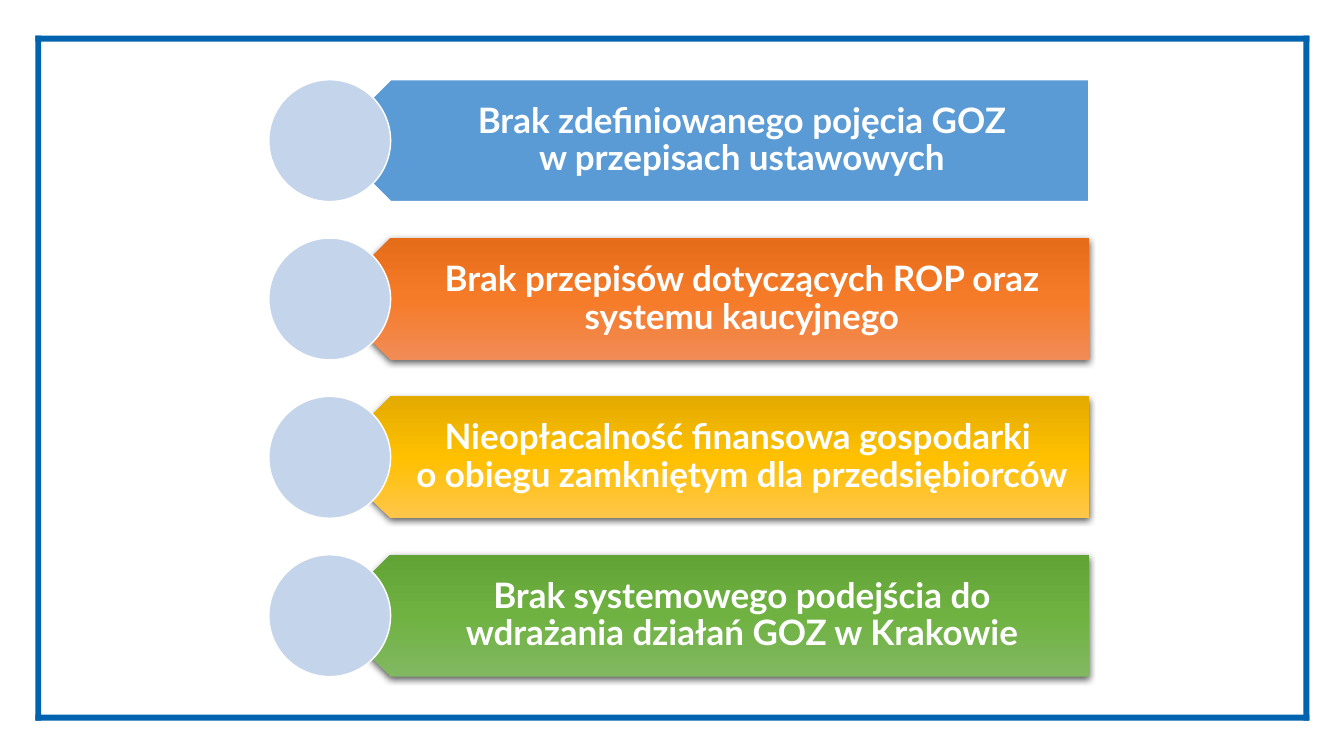
from copy import deepcopy

from lxml import etree
from pptx import Presentation
from pptx.dml.color import RGBColor
from pptx.enum.shapes import MSO_SHAPE
from pptx.enum.text import MSO_ANCHOR, PP_ALIGN
from pptx.oxml.ns import qn
from pptx.util import Cm, Pt

RECTANGLE, PENTAGON, OVAL = MSO_SHAPE.RECTANGLE, MSO_SHAPE.PENTAGON, MSO_SHAPE.OVAL
MIDDLE, CENTER = MSO_ANCHOR.MIDDLE, PP_ALIGN.CENTER

BARRIERS = [
    ("Brak zdefiniowanego pojęcia GOZ\vw przepisach ustawowych", ["5B9BD5"]),
    ("Brak przepisów dotyczących ROP oraz systemu kaucyjnego",
     ["F18C57", "F67B28", "E56C19"]),
    ("Nieopłacalność finansowa gospodarki \vo obiegu zamkniętym dla przedsiębiorców",
     ["FFC64B", "FFC000", "E3AB00"]),
    ("Brak systemowego podejścia do wdrażania działań GOZ w Krakowie",
     ["81B861", "6FB242", "62A336"]),
]

THEME = {"font": "Lato", "size": 25, "text": "FFFFFF", "frame": "0063AF",
         "circle": "C4D5EB", "outline": "FFFFFF", "shadow": "000000"}

SLIDE_W, SLIDE_H = 33.87, 19.05
FRAME_LEFT, FRAME_TOP, FRAME_RIGHT, FRAME_BOTTOM = 0.89, 0.9, 33.0, 18.16
FRAME_THICK = 0.15
BAR_LEFT, BAR_TOP, BAR_W, BAR_H, BAR_PITCH = 8.31, 2.01, 19.13, 3.07, 3.99
LABEL_INDENT = 0.77
LABEL_W = BAR_W - LABEL_INDENT
LABEL_INSETS = (1.35, 0.25, 0.48, 0.25)


def add_block(slide, kind, box, colors, outline=None):
    block = slide.shapes.add_shape(kind, *map(Cm, box))
    block.shadow.inherit = False
    if len(colors) == 1:
        block.fill.solid()
        block.fill.fore_color.rgb = RGBColor.from_string(colors[0])
    else:
        fill_gradient(block, colors)
    if outline:
        block.line.color.rgb = RGBColor.from_string(outline)
        block.line.width = Pt(1)
    else:
        block.line.fill.background()
    return block


def fill_gradient(block, colors):
    block.fill.gradient()
    block.fill.gradient_angle = 270
    stop_list = block._element.spPr.find(qn("a:gradFill")).find(qn("a:gsLst"))
    stop_list.insert(1, deepcopy(stop_list[0]))
    for index, (stop, color) in enumerate(zip(block.fill.gradient_stops, colors)):
        stop.position = index / (len(colors) - 1)
        stop.color.rgb = RGBColor.from_string(color)


def cast_shadow(block, color):
    effects = block._element.spPr.find(qn("a:effectLst"))
    shadow = etree.SubElement(effects, qn("a:outerShdw"), blurRad=str(Pt(4.5)),
                              dist=str(Pt(1.5)), dir="5400000", rotWithShape="0")
    tone = etree.SubElement(shadow, qn("a:srgbClr"), val=color)
    etree.SubElement(tone, qn("a:alpha"), val="63000")


def add_label(slide, text, *, box, insets, font, size, color, bold=True):
    label = slide.shapes.add_textbox(*map(Cm, box)).text_frame
    label.word_wrap = True
    label.vertical_anchor = MIDDLE
    (label.margin_left, label.margin_top,
     label.margin_right, label.margin_bottom) = map(Cm, insets)
    paragraph = label.paragraphs[0]
    paragraph.text = text
    paragraph.alignment = CENTER
    paragraph.line_spacing = 0.9
    for run in paragraph.runs:
        run.font.name = font
        run.font.size = Pt(size)
        run.font.bold = bold
        run.font.color.rgb = RGBColor.from_string(color)


def add_frame(slide):
    width, height = FRAME_RIGHT - FRAME_LEFT, FRAME_BOTTOM - FRAME_TOP
    for left in (FRAME_LEFT, FRAME_RIGHT - FRAME_THICK):
        add_block(slide, RECTANGLE, (left, FRAME_TOP, FRAME_THICK, height), [THEME["frame"]])
    for top in (FRAME_TOP, FRAME_BOTTOM - FRAME_THICK):
        add_block(slide, RECTANGLE, (FRAME_LEFT, top, width, FRAME_THICK), [THEME["frame"]])


def add_barrier(slide, top, text, colors):
    is_flat = len(colors) == 1
    bar = add_block(slide, PENTAGON, (BAR_LEFT, top, BAR_W, BAR_H), colors,
                    THEME["outline"] if is_flat else None)
    bar.rotation = 180
    if not is_flat:
        cast_shadow(bar, THEME["shadow"])
    add_label(slide, text, box=(BAR_LEFT + LABEL_INDENT, top, LABEL_W, BAR_H),
              insets=LABEL_INSETS, font=THEME["font"], size=THEME["size"],
              color=THEME["text"])
    add_block(slide, OVAL, (BAR_LEFT - BAR_H / 2, top, BAR_H, BAR_H),
              [THEME["circle"]], THEME["outline"])


def main():
    deck = Presentation()
    deck.slide_width, deck.slide_height = Cm(SLIDE_W), Cm(SLIDE_H)
    slide = deck.slides.add_slide(deck.slide_layouts[6])
    add_frame(slide)
    for row, (text, colors) in enumerate(BARRIERS):
        add_barrier(slide, BAR_TOP + row * BAR_PITCH, text, colors)
    deck.save("out.pptx")


if __name__ == "__main__":
    main()
